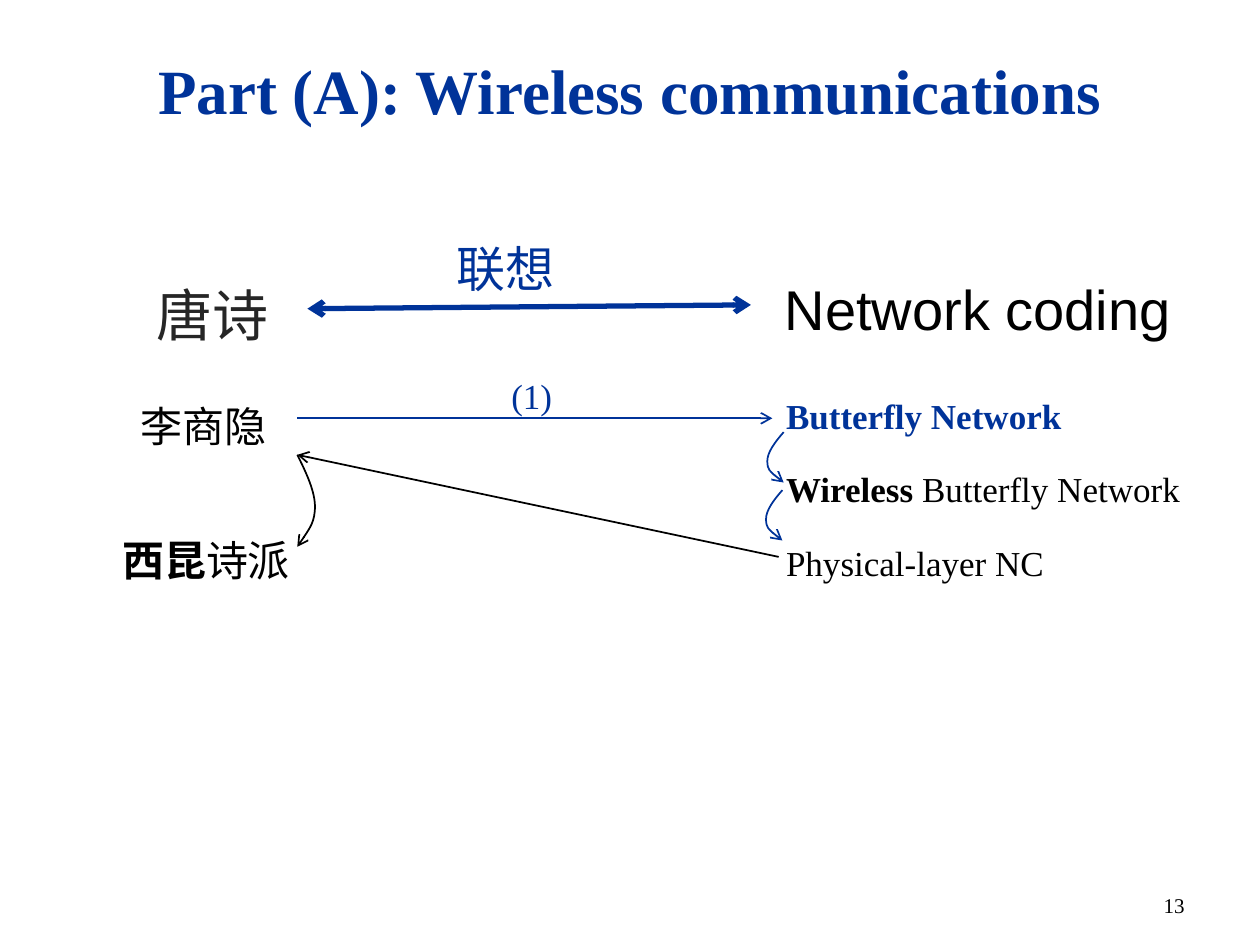
from typing import NamedTuple

from lxml.etree import SubElement
from pptx import Presentation
from pptx.dml.color import RGBColor
from pptx.enum.shapes import MSO_CONNECTOR as Link
from pptx.enum.text import MSO_ANCHOR as Anchor, PP_ALIGN as Align
from pptx.oxml.ns import qn
from pptx.util import Inches, Pt

COLORS = {"blue": "003399", "black": "000000", "gray": "262626"}
SERIF, SANS, COMIC = "Times New Roman", "Arial", "Comic Neue"


class Label(NamedTuple):
    box: tuple[float, float, float, float]
    paras: list[str]  # text between ** marks is bold
    size: int
    font: str = SERIF
    color: str = "black"
    align: Align = Align.LEFT
    anchor: Anchor = Anchor.TOP
    wrap: bool = True


class Arrow(NamedTuple):
    start: tuple[float, float]
    end: tuple[float, float]
    color: str = "blue"
    width: int = 1
    both: bool = False


class Curve(NamedTuple):
    points: list[tuple[float, float]]  # start, then three per Bezier part
    color: str = "blue"


def rgb(name: str) -> RGBColor:
    return RGBColor.from_string(COLORS[name])


def add_label(slide, label: Label) -> None:
    frame = slide.shapes.add_textbox(*map(Inches, label.box)).text_frame
    frame.word_wrap = label.wrap
    frame.vertical_anchor = label.anchor
    for i, text in enumerate(label.paras):
        para = frame.paragraphs[0] if i == 0 else frame.add_paragraph()
        para.alignment = label.align
        if len(label.paras) > 1:
            para.space_before = Pt(18)
        para.font.size = Pt(label.size)
        para.font.name = label.font
        para.font.color.rgb = rgb(label.color)
        for j, part in enumerate(text.split("**")):
            if part:
                run = para.add_run()
                run.text = part
                run.font.bold = j % 2 == 1


def style_line(shape, color: str, width: int, both: bool = False) -> None:
    shape.line.color.rgb = rgb(color)
    shape.line.width = Pt(width)
    props = shape.line._get_or_add_ln()
    for end in ["headEnd", "tailEnd"] if both else ["tailEnd"]:
        SubElement(props, qn(f"a:{end}"), type="arrow")


def add_arrow(slide, arrow: Arrow) -> None:
    ends = map(Inches, arrow.start + arrow.end)
    line = slide.shapes.add_connector(Link.STRAIGHT, *ends)
    style_line(line, arrow.color, arrow.width, arrow.both)
    SubElement(line._element.spPr, qn("a:effectLst"))


def add_curve(slide, curve: Curve) -> None:
    first, *rest = [(Inches(x), Inches(y)) for x, y in curve.points]
    build = slide.shapes.build_freeform(*first)
    build.add_line_segments(rest, close=False)
    shape = build.convert_to_shape()
    # Join each three straight steps into one Bezier part
    steps = list(shape._element.iter(qn("a:lnTo")))
    for i in range(0, len(steps), 3):
        bend = SubElement(steps[i].getparent(), qn("a:cubicBezTo"))
        for step in steps[i:i + 3]:
            bend.append(step[0])
            step.getparent().remove(step)
    shape.fill.background()
    shape.shadow.inherit = False
    style_line(shape, curve.color, 1)


def bow(x: float, y: float) -> list[tuple[float, float]]:
    """Left-hand bow from (x, y) down to the next topic."""
    steps = [(0, 0), (-.07, .08), (-.13, .16), (-.13, .23),
             (-.13, .3), (-.07, .35), (0, .4)]
    return [(x + dx, y + dy) for dx, dy in steps]


LABELS = [
    # Title and page number
    Label((.55, .36, 8.9, 1.14), ["**Part (A): Wireless communications**"], 36,
          color="blue", align=Align.CENTER),
    Label((7.17, 6.83, 2.33, .5), ["13"], 12, align=Align.RIGHT,
          anchor=Anchor.BOTTOM),
    # Headings
    Label((1.14, 2.18, 1.1, .64), ["唐诗"], 32, COMIC, "gray", wrap=False),
    Label((6.13, 2.13, 3.28, .64), ["Network coding"], 32, SANS),
    Label((3.23, 1.84, 1.57, .57), ["联想"], 28, color="blue",
          align=Align.CENTER),
    # Poets
    Label((1.02, 3.13, 2.09, .5), ["李商隐"], 24, SANS),
    Label((.87, 4.19, 1.55, .5), ["**西昆**诗派"], 24),
    Label((3.96, 2.92, .6, .44), ["(1)"], 20, color="blue", wrap=False),
]
TOPICS = Label((6.14, 3.08, 3.5, 1.62),
               ["**Butterfly Network**", "**Wireless** Butterfly Network",
                "Physical-layer NC"], 20)
ARROWS = [
    Arrow((2.44, 2.45), (5.96, 2.42), width=3, both=True),
    Arrow((2.36, 3.32), (6.13, 3.32)),
    Arrow((6.18, 4.42), (2.36, 3.61), "black"),
]
CURVES = [
    Curve(bow(6.22, 3.43)),
    Curve(bow(6.21, 3.89)),
    Curve([(2.36, 3.61), (2.43, 3.75), (2.5, 3.9), (2.5, 4.02),
           (2.5, 4.14), (2.43, 4.24), (2.36, 4.34)], "black"),
]


def main() -> None:
    deck = Presentation()
    deck.slide_width, deck.slide_height = Inches(10), Inches(7.5)
    slide = deck.slides.add_slide(deck.slide_layouts[6])
    for label in LABELS:
        add_label(slide, label)
    # Topics, the first one in blue
    add_label(slide, TOPICS)
    lead = slide.shapes[-1].text_frame.paragraphs[0]
    lead.font.color.rgb = rgb("blue")
    for arrow in ARROWS:
        add_arrow(slide, arrow)
    for curve in CURVES:
        add_curve(slide, curve)
    deck.save("out.pptx")


if __name__ == "__main__":
    main()
